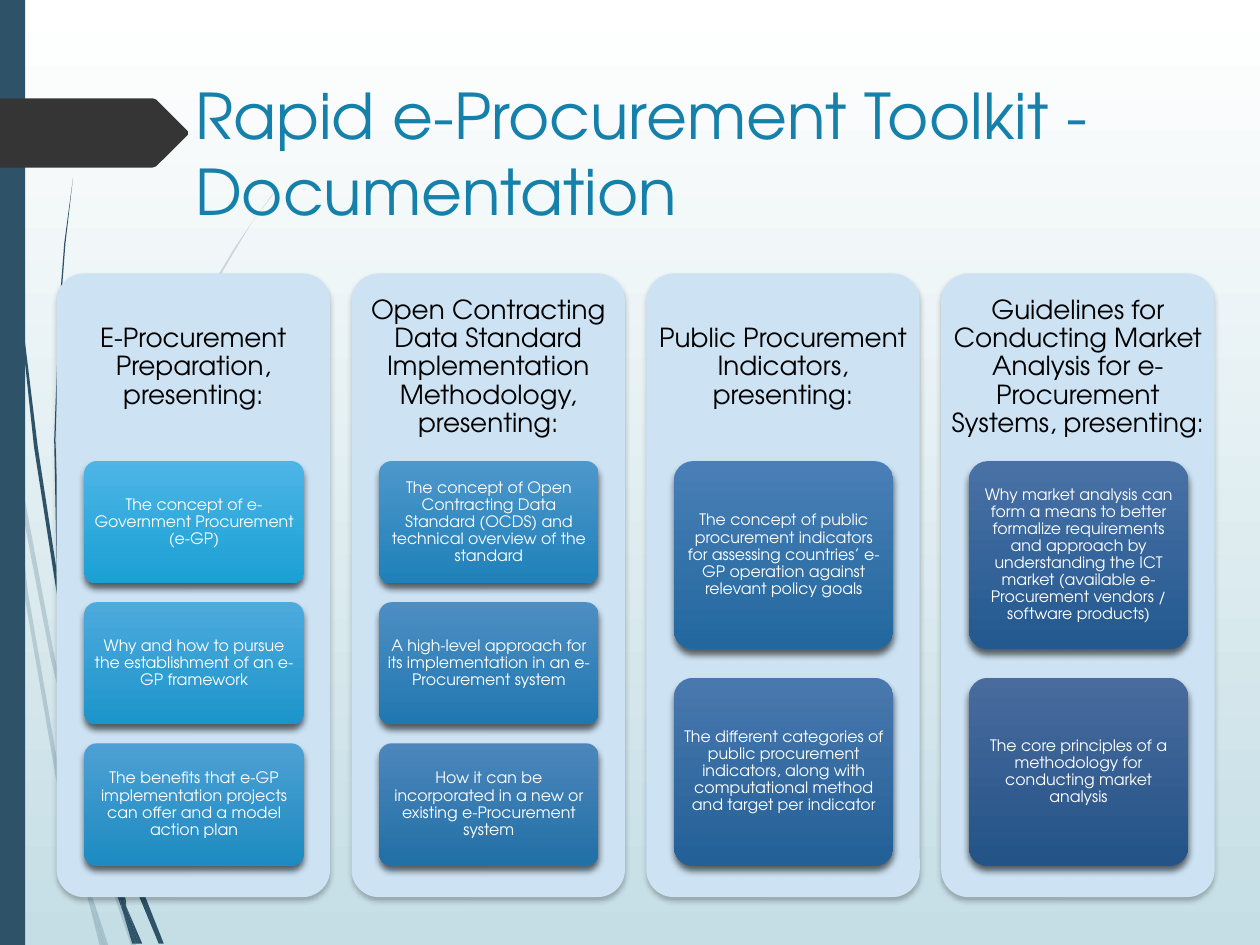
from dataclasses import dataclass

from lxml import etree
from pptx import Presentation
from pptx.dml import color
from pptx.enum import shapes, text
from pptx.oxml import ns
from pptx.util import Pt

PX = 9144  # EMU per px, 100 px to the inch
FONT = "TeX Gyre Adventor"
NAVY = "2E5369"
Point = tuple[int, int]


@dataclass
class Card:
    top_colour: str
    bottom_colour: str
    label: str


@dataclass
class Column:
    heading: str
    cards: list[Card]


@dataclass
class Shadow:
    opacity: int
    blur: int
    distance: int


PANEL_SHADOW = Shadow(25, 3, 2)
CARD_SHADOW = Shadow(60, 4, 3)

COLUMNS = [
    Column("E-Procurement Preparation, presenting:", [
        Card("4DB5E6", "1AA0D4", "The concept of e-Government Procurement (e-GP)"),
        Card("4DAADD", "1C95CA", "Why and how to pursue the establishment of an e-GP framework"),
        Card("4DA0D4", "1D8BC1", "The benefits that e-GP implementation projects can offer "
             "and a model action plan"),
    ]),
    Column("Open Contracting Data Standard Implementation Methodology, presenting:", [
        Card("4D97CB", "1F81B9", "The concept of Open Contracting Data Standard (OCDS) "
             "and technical overview of the standard"),
        Card("4D8EC3", "2078B0", "A high-level approach for its implementation "
             "in an e-Procurement system"),
        Card("4C86BB", "2170A7", "How it can be incorporated in a new or existing "
             "e-Procurement system"),
    ]),
    Column("Public Procurement Indicators, presenting:", [
        Card("497FB6", "22689F", "The concept of public procurement indicators for assessing "
             "countries’ e-GP operation against relevant policy goals"),
        Card("4978AE", "226097", "The different categories of public procurement indicators, "
             "along with computational method and target per indicator"),
    ]),
    Column("Guidelines for Conducting Market Analysis for e-Procurement Systems, presenting:", [
        Card("4971A6", "23598F", "Why market analysis can form a means to better formalize "
             "requirements and approach by understanding the ICT market "
             "(available e-Procurement vendors / software products)"),
        Card("496B9E", "235387", "The core principles of a methodology "
             "for conducting market analysis"),
    ]),
]

PALE_WISPS = [
    [(8, 350), (6, 322), (0, 282), (0, 299), (7, 344)],
    [(40, 522), (59, 599), (59, 586), (43, 520), (10, 345), (12, 376)],
    [(64, 607), (61, 596), (61, 610), (85, 694), (104, 750), (108, 750), (88, 692)],
    [(83, 750), (86, 750), (73, 711)],
    [(64, 683), (48, 619), (22, 469), (12, 376), (8, 350), (19, 470), (45, 621),
     (64, 693), (70, 714), (69, 707)],
    [(58, 599), (60, 646), (64, 683), (67, 692), (73, 711), (72, 706), (63, 646),
     (61, 610), (61, 608)],
    [(61, 584), (76, 462), (111, 349), (159, 245), (187, 198), (201, 175), (217, 154),
     (217, 153), (201, 175), (186, 197), (158, 244), (110, 348), (75, 461), (59, 584),
     (59, 586), (61, 596)],
    [(70, 714), (79, 750), (82, 750)],
    [(67, 692), (65, 683), (69, 707), (70, 714), (82, 750), (83, 750), (73, 711)],
]
DARK_WISPS = [
    [(5, 110), (14, 233), (27, 355), (46, 477), (47, 481), (45, 457), (45, 453),
     (30, 355), (15, 232), (6, 109), (4, 48), (3, 0), (2, 0), (3, 48)],
    [(94, 649), (91, 641), (91, 656), (109, 708), (126, 749), (130, 749), (113, 706)],
    [(91, 691), (81, 657), (60, 556), (53, 505), (47, 477), (56, 557), (77, 659),
     (92, 708), (97, 722), (96, 717)],
    [(50, 472), (48, 453), (44, 349), (48, 245), (52, 193), (58, 141), (51, 193),
     (47, 245), (43, 349), (45, 449), (49, 472)],
    [(110, 749), (113, 749), (100, 719)],
    [(47, 477), (53, 505), (50, 472), (49, 472), (45, 449), (45, 453)],
    [(97, 722), (105, 749), (108, 749)],
    [(88, 645), (91, 691), (96, 706), (100, 719), (100, 716), (91, 656), (90, 651)],
    [(96, 706), (91, 691), (96, 717), (97, 722), (108, 749), (110, 749), (100, 719)],
]
TAG = [(0, 78), (121, 78), (124, 79), (149, 104), (149, 107), (124, 132), (121, 133), (0, 133)]


def rgb(value: str) -> color.RGBColor:
    return color.RGBColor.from_string(value)


def fill_solid(shape, colour: str, opacity: int = 100) -> None:
    shape.fill.solid()
    shape.fill.fore_color.rgb = rgb(colour)
    shape.line.fill.background()
    shape.shadow.inherit = False
    if opacity < 100:
        value = shape.fill._xPr.find(".//" + ns.qn("a:srgbClr"))
        etree.SubElement(value, ns.qn("a:alpha"), val=str(opacity * 1000))


def fill_gradient(fill, top_colour: str, bottom_colour: str) -> None:
    fill.gradient()
    fill.gradient_angle = 270
    for stop, colour in zip(fill.gradient_stops, (top_colour, bottom_colour)):
        stop.color.rgb = rgb(colour)


def add_shadow(shape, shadow: Shadow) -> None:
    shape.shadow.inherit = False
    effects = shape._element.spPr.find(ns.qn("a:effectLst"))
    outer = etree.SubElement(effects, ns.qn("a:outerShdw"), blurRad=str(Pt(shadow.blur)),
                             dist=str(Pt(shadow.distance)), dir="5400000", rotWithShape="0")
    value = etree.SubElement(outer, ns.qn("a:srgbClr"), val="000000")
    etree.SubElement(value, ns.qn("a:alpha"), val=str(shadow.opacity * 1000))


def draw_outline(slide, points: list[Point], colour: str, opacity: int = 100) -> None:
    builder = slide.shapes.build_freeform(*points[0], scale=PX)
    builder.add_line_segments(points[1:], close=True)
    fill_solid(builder.convert_to_shape(), colour, opacity)


def add_box(slide, kind, left: int, top: int, width: int, height: int):
    return slide.shapes.add_shape(kind, left * PX, top * PX, width * PX, height * PX)


def add_rounded(slide, left: int, top: int, width: int, height: int, shadow: Shadow):
    shape = add_box(slide, shapes.MSO_SHAPE.ROUNDED_RECTANGLE, left, top, width, height)
    shape.adjustments[0] = 0.1
    shape.line.fill.background()
    add_shadow(shape, shadow)
    return shape


def write(shape, content: str, size: int, colour: str) -> None:
    frame = shape.text_frame
    frame.text = content
    frame.word_wrap = True
    font = frame.paragraphs[0].runs[0].font
    font.name, font.size, font.color.rgb = FONT, Pt(size), rgb(colour)


def centre(shape, side: int, end: int) -> None:
    frame = shape.text_frame
    frame.vertical_anchor = text.MSO_ANCHOR.MIDDLE
    frame.margin_left = frame.margin_right = side * PX
    frame.margin_top = frame.margin_bottom = end * PX
    frame.paragraphs[0].alignment = text.PP_ALIGN.CENTER
    frame.paragraphs[0].line_spacing = 0.9


def add_text(slide, left: int, top: int, width: int, height: int,
             content: str, size: int, colour: str):
    box = slide.shapes.add_textbox(left * PX, top * PX, width * PX, height * PX)
    write(box, content, size, colour)
    return box


def draw_column(slide, column: Column, left: int) -> None:
    panel = add_rounded(slide, left, 217, 217, 495, PANEL_SHADOW)
    panel.fill.solid()
    panel.fill.fore_color.rgb = rgb("CDE3F4")
    centre(add_text(slide, left, 217, 217, 149, column.heading, 15, "000000"), 6, 6)

    # Cards share a fixed height, with gaps of 0.15 of a card
    count = len(column.cards)
    height = 321 / (count + 0.15 * (count - 1))
    for index, card in enumerate(column.cards):
        top = round(366 + index * height * 1.15)
        shape = add_rounded(slide, left + 22, top, 174, round(height), CARD_SHADOW)
        fill_gradient(shape.fill, card.top_colour, card.bottom_colour)
        write(shape, card.label, 9, "FFFFFF")
        centre(shape, 3, 2)


def main() -> None:
    presentation = Presentation()
    presentation.slide_width, presentation.slide_height = 1000 * PX, 750 * PX
    slide = presentation.slides.add_slide(presentation.slide_layouts[6])

    # Backdrop
    fill_gradient(slide.background.fill, "FFFFFF", "C5DEE5")
    for wisp in PALE_WISPS:
        draw_outline(slide, wisp, NAVY, 20)
    for wisp in DARK_WISPS:
        draw_outline(slide, wisp, NAVY)
    fill_solid(add_box(slide, shapes.MSO_SHAPE.RECTANGLE, 0, 0, 20, 750), NAVY)
    draw_outline(slide, TAG, "353535")

    # Title
    add_text(slide, 145, 56, 788, 140, "Rapid e-Procurement Toolkit - Documentation", 36, "1581AA")

    # Columns
    for index, column in enumerate(COLUMNS):
        draw_column(slide, column, 45 + 234 * index)

    presentation.save("out.pptx")


if __name__ == "__main__":
    main()
